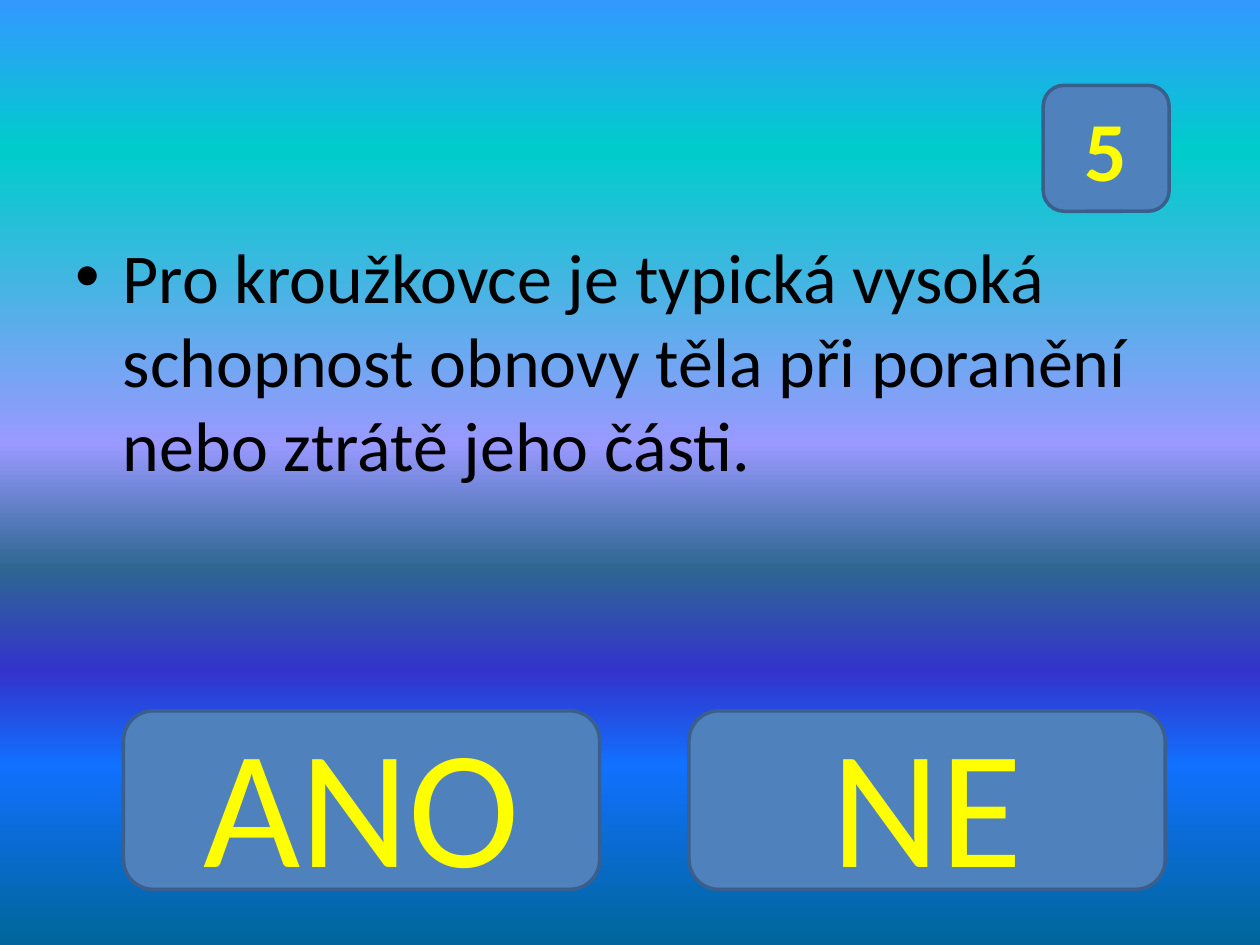
from lxml.etree import SubElement
from pptx import Presentation
from pptx.dml.color import RGBColor
from pptx.enum.shapes import MSO_SHAPE
from pptx.enum.text import MSO_ANCHOR, MSO_AUTO_SIZE, PP_ALIGN
from pptx.oxml.ns import qn
from pptx.util import Cm, Pt


def color(value):
    return RGBColor.from_string(value)


class QuizSlide:
    font = "Calibri"
    ink = "000000"
    accent = "FFFF00"
    button_fill = "4F81BD"
    button_line = "3A5F8C"

    def __init__(self, deck):
        self.slide = deck.slides.add_slide(deck.slide_layouts[1])
        title = self.slide.shapes.title.element
        title.getparent().remove(title)

    def background(self, stops):
        fill = self.slide.background.fill
        fill.gradient()
        fill.gradient_angle = 270
        gradient = self.slide.element.find(".//" + qn("a:gsLst"))
        for stop in list(gradient):
            gradient.remove(stop)
        for percent, value in stops:
            stop = SubElement(gradient, qn("a:gs"), pos=str(percent * 1000))
            SubElement(stop, qn("a:srgbClr"), val=value)

    def add_text(self, paragraph, text, size, value, bold=False):
        run = paragraph.add_run()
        run.text = text
        run.font.name = self.font
        run.font.size = Pt(size)
        run.font.bold = bold
        run.font.color.rgb = color(value)

    def statement(self, text, left, top, width, height, inset):
        body = self.slide.placeholders[1]
        body.left, body.top = Cm(left), Cm(top)
        body.width, body.height = Cm(width), Cm(height)
        frame = body.text_frame
        frame.auto_size = MSO_AUTO_SIZE.NONE
        frame.word_wrap = True
        frame.vertical_anchor = MSO_ANCHOR.TOP
        frame.margin_top = Cm(inset)
        paragraph = frame.paragraphs[0]
        paragraph.space_before = Pt(0)
        self.add_text(paragraph, text, 40, self.ink)

    def button(self, text, left, top, width, height, size, bold=False):
        button = self.slide.shapes.add_shape(
            MSO_SHAPE.ROUNDED_RECTANGLE, Cm(left), Cm(top), Cm(width), Cm(height))
        button.shadow.inherit = False
        button.fill.solid()
        button.fill.fore_color.rgb = color(self.button_fill)
        button.line.color.rgb = color(self.button_line)
        button.line.width = Pt(2)
        frame = button.text_frame
        frame.word_wrap = True
        frame.vertical_anchor = MSO_ANCHOR.MIDDLE
        paragraph = frame.paragraphs[0]
        paragraph.alignment = PP_ALIGN.CENTER
        self.add_text(paragraph, text, size, self.accent, bold)


def main():
    deck = Presentation()
    deck.slide_width, deck.slide_height = Cm(25.4), Cm(19.05)
    quiz = QuizSlide(deck)
    quiz.background([
        (0, "3399FF"), (16, "00CCCC"), (47, "9999FF"), (60, "2E6792"),
        (71, "3333CC"), (81, "1170FF"), (100, "006699"),
    ])
    quiz.statement(
        "Pro kroužkovce je typická vysoká schopnost obnovy těla "
        "při poranění nebo ztrátě jeho části.",
        1.27, 1.32, 22.86, 11.99, 3.38)
    for column, answer in enumerate(("ANO", "NE")):
        quiz.button(answer, 2.49 + column * 11.4, 14.33, 9.6, 3.6, 96)
    quiz.button("5", 21.03, 1.72, 2.54, 2.54, 48, bold=True)
    deck.save("out.pptx")


if __name__ == "__main__":
    main()
